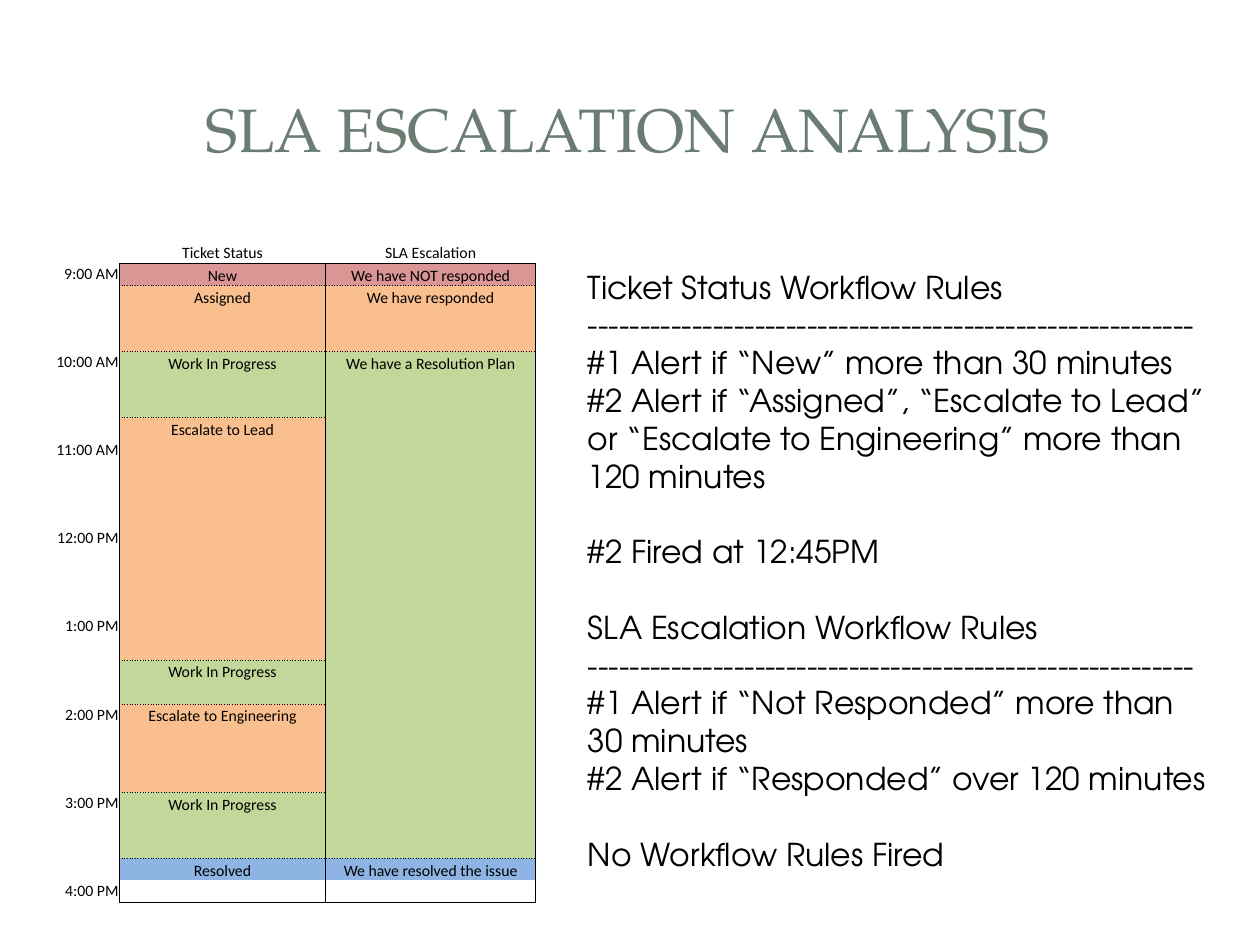
from dataclasses import dataclass
from typing import Optional

from lxml.etree import SubElement
from pptx import Presentation
from pptx.dml.color import RGBColor
from pptx.enum.shapes import MSO_SHAPE
from pptx.enum.text import MSO_ANCHOR, MSO_AUTO_SIZE, PP_ALIGN
from pptx.oxml.ns import qn
from pptx.util import Cm, Pt


@dataclass(frozen=True)
class Theme:
    title_font: str = "TeX Gyre Pagella"
    body_font: str = "TeX Gyre Adventor"
    table_font: str = "Calibri"
    title_size: float = 35
    body_size: float = 18
    table_size: float = 9
    panel: str = "FFFFFF"
    title: str = "6B7D72"
    ink: str = "000000"
    red: str = "DA9694"
    orange: str = "FABF8F"
    green: str = "C4D79B"
    blue: str = "8DB4E2"
    border: float = 0.5
    body_gap: float = 21.6


@dataclass(frozen=True)
class Stage:
    text: str
    slots: int
    color: Optional[str] = None


@dataclass(frozen=True)
class Panel:
    left: float
    top: float
    width: float
    height: float
    kind: MSO_SHAPE = MSO_SHAPE.RECTANGLE
    opacity: int = 100


THEME = Theme()
NO_STYLE = "{2D5ABB26-0587-4C30-8999-92F81FD0307C}"
SLOTS_PER_HOUR = 4
FIRST_HOUR, LAST_HOUR = 9, 16
RULE = "-" * 58

PANELS = [
    Panel(0.25, 0.28, 24.89, 18.52, MSO_SHAPE.ROUNDED_RECTANGLE),
    Panel(0.76, 0.76, 23.88, 3.68, opacity=83),
    Panel(1.04, 1.04, 23.29, 3.1),
]

TRACKS = {
    "Ticket Status": [
        Stage("New", 1, THEME.red),
        Stage("Assigned", 3, THEME.orange),
        Stage("Work In Progress", 3, THEME.green),
        Stage("Escalate to Lead", 11, THEME.orange),
        Stage("Work In Progress", 2, THEME.green),
        Stage("Escalate to Engineering", 4, THEME.orange),
        Stage("Work In Progress", 3, THEME.green),
        Stage("Resolved", 1, THEME.blue),
        Stage("", 1),
    ],
    "SLA Escalation": [
        Stage("We have NOT responded", 1, THEME.red),
        Stage("We have responded", 3, THEME.orange),
        Stage("We have a Resolution Plan", 23, THEME.green),
        Stage("We have resolved the issue", 1, THEME.blue),
        Stage("", 1),
    ],
}

RULE_GROUPS = [
    [
        "Ticket Status Workflow Rules",
        RULE,
        "#1 Alert if “New” more than 30 minutes",
        "#2 Alert if “Assigned”, “Escalate to Lead” or “Escalate to Engineering” more than 120 minutes",
    ],
    ["#2 Fired at 12:45PM"],
    [
        "SLA Escalation Workflow Rules",
        RULE,
        "#1 Alert if “Not Responded” more than 30 minutes",
        "#2 Alert if “Responded” over 120 minutes",
    ],
    ["No Workflow Rules Fired"],
]


def write(p, text: str, *, font: str, size: float, color: str = THEME.ink,
          align=PP_ALIGN.LEFT, before: float = 0) -> None:
    p.alignment = align
    p.space_before = Pt(before)
    r = p.add_run()
    r.text = text
    r.font.name = font
    r.font.size = Pt(size)
    r.font.color.rgb = RGBColor.from_string(color)


def add_panel(s, panel: Panel) -> None:
    sp = s.shapes.add_shape(panel.kind, Cm(panel.left), Cm(panel.top),
                            Cm(panel.width), Cm(panel.height))
    if panel.kind == MSO_SHAPE.ROUNDED_RECTANGLE:
        sp.adjustments[0] = 0.02
    sp.shadow.inherit = False
    sp.line.fill.background()
    sp.fill.solid()
    sp.fill.fore_color.rgb = RGBColor.from_string(THEME.panel)
    if panel.opacity < 100:
        color = sp._element.spPr.find(qn("a:solidFill"))[0]
        SubElement(color, qn("a:alpha"), val=str(panel.opacity * 1000))


def add_box(s, left: float, top: float, width: float, height: float, anchor):
    sp = s.shapes.add_textbox(Cm(left), Cm(top), Cm(width), Cm(height))
    tf = sp.text_frame
    tf.word_wrap = True
    tf.vertical_anchor = anchor
    return tf


def add_border(cell, side: str, dash: Optional[str]) -> None:
    tc_pr = cell._tc.get_or_add_tcPr()
    ln = SubElement(tc_pr, qn(f"a:ln{side}"), w=str(Pt(THEME.border)))
    if dash is None:
        SubElement(ln, qn("a:noFill"))
        return
    fill = SubElement(ln, qn("a:solidFill"))
    SubElement(fill, qn("a:srgbClr"), val=THEME.ink)
    SubElement(ln, qn("a:prstDash"), val=dash)


def format_cell(cell, text: str = "", *, align=PP_ALIGN.CENTER,
                anchor=MSO_ANCHOR.BOTTOM, color: Optional[str] = None,
                **borders: Optional[str]) -> None:
    cell.margin_left = cell.margin_right = cell.margin_top = Cm(0.02)
    cell.margin_bottom = 0
    cell.vertical_anchor = anchor
    for side in "LRTB":
        add_border(cell, side, borders.get(side))
    if color:
        cell.fill.solid()
        cell.fill.fore_color.rgb = RGBColor.from_string(color)
    else:
        cell.fill.background()
    p = cell.text_frame.paragraphs[0]
    if text:
        write(p, text, font=THEME.table_font, size=THEME.table_size, align=align)
    else:
        SubElement(p._p, qn("a:endParaRPr"), sz=str(int(THEME.table_size * 100)))


def hour_label(row: int) -> str:
    hours, rest = divmod(row - 1, SLOTS_PER_HOUR)
    if row < 1 or rest:
        return ""
    hour = FIRST_HOUR + hours
    return f"{(hour - 1) % 12 + 1}:00 {'AM' if hour < 12 else 'PM'}"


def fill_track(table, col: int, name: str, stages: list[Stage]) -> None:
    format_cell(table.cell(0, col), name, anchor=MSO_ANCHOR.MIDDLE, B="solid")
    row, edge = 1, "solid"
    for i, stage in enumerate(stages):
        if i == len(stages) - 1:
            end_edge = "solid"
        else:
            end_edge = "sysDot" if stages[i + 1].color else None
        for slot in range(stage.slots):
            format_cell(table.cell(row, col), "" if slot else stage.text,
                        color=stage.color, L="solid", R="solid",
                        T=None if slot else edge,
                        B=end_edge if slot == stage.slots - 1 else None)
            row += 1
        edge = end_edge


def add_timeline(s) -> None:
    count = 2 + (LAST_HOUR - FIRST_HOUR) * SLOTS_PER_HOUR
    widths = (1.39, 4.15, 4.24)
    height = Cm(13.34)
    frame = s.shapes.add_table(count, len(widths), Cm(1.02), Cm(4.87),
                               Cm(sum(widths)), height)
    table = frame.table
    table.first_row = table.horz_banding = False
    table._tbl.tblPr.find(qn("a:tableStyleId")).text = NO_STYLE
    for column, width in zip(table.columns, widths):
        column.width = Cm(width)
    for i, row in enumerate(table.rows):
        row.height = height // count
        format_cell(table.cell(i, 0), hour_label(i), align=PP_ALIGN.RIGHT,
                    anchor=MSO_ANCHOR.TOP, R="solid" if i else None)
    for col, (name, stages) in enumerate(TRACKS.items(), start=1):
        fill_track(table, col, name, stages)


def add_rules(s) -> None:
    tf = add_box(s, 11.6, 5.27, 13.18, 13.34, MSO_ANCHOR.TOP)
    tf.auto_size = MSO_AUTO_SIZE.SHAPE_TO_FIT_TEXT
    p = tf.paragraphs[0]
    for g, group in enumerate(RULE_GROUPS):
        for i, line in enumerate(group):
            if g or i:
                p = tf.add_paragraph()
            write(p, line, font=THEME.body_font, size=THEME.body_size,
                  before=THEME.body_gap if g and not i else 0)


def main() -> None:
    prs = Presentation()
    prs.slide_width, prs.slide_height = Cm(25.4), Cm(19.05)
    s = prs.slides.add_slide(prs.slide_layouts[6])
    for panel in PANELS:
        add_panel(s, panel)
    tf = add_box(s, 1.19, 1.14, 22.94, 2.9, MSO_ANCHOR.MIDDLE)
    write(tf.paragraphs[0], "SLA ESCALATION ANALYSIS", font=THEME.title_font,
          size=THEME.title_size, color=THEME.title, align=PP_ALIGN.CENTER)
    add_rules(s)
    add_timeline(s)
    prs.save("out.pptx")


if __name__ == "__main__":
    main()
